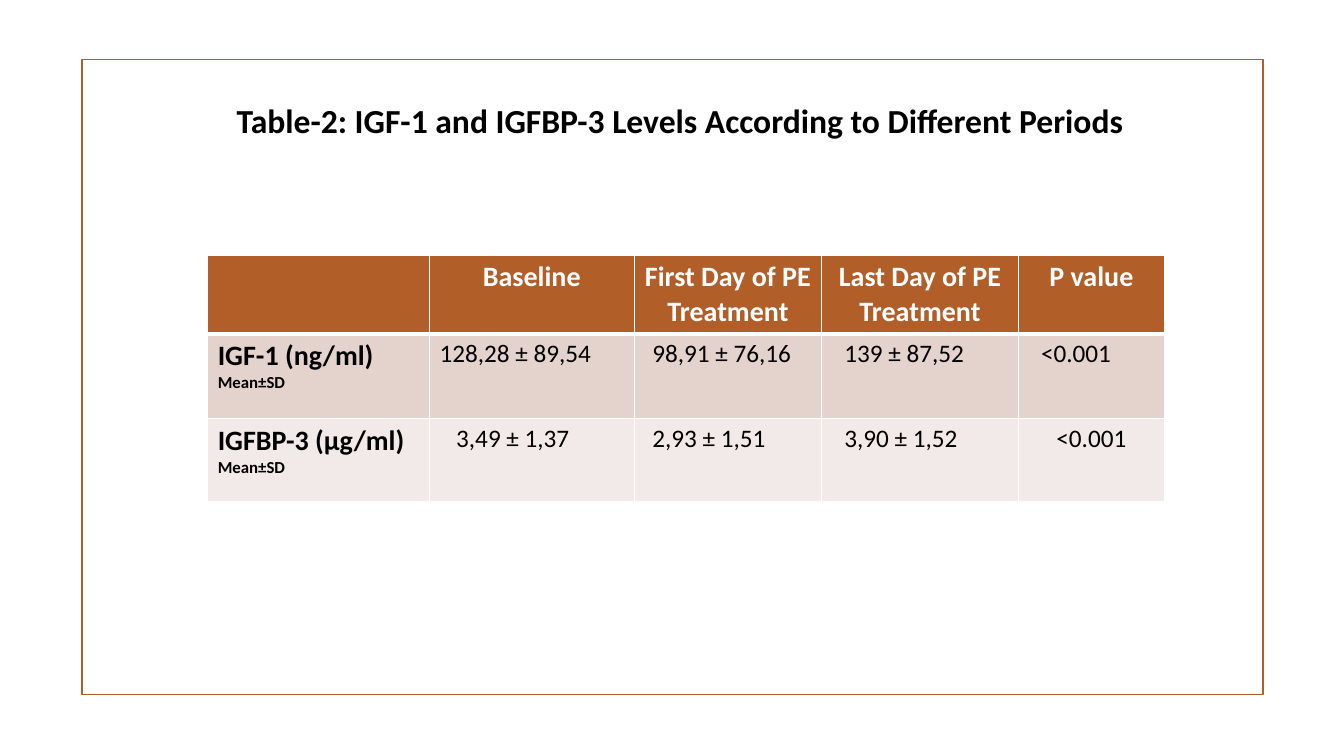
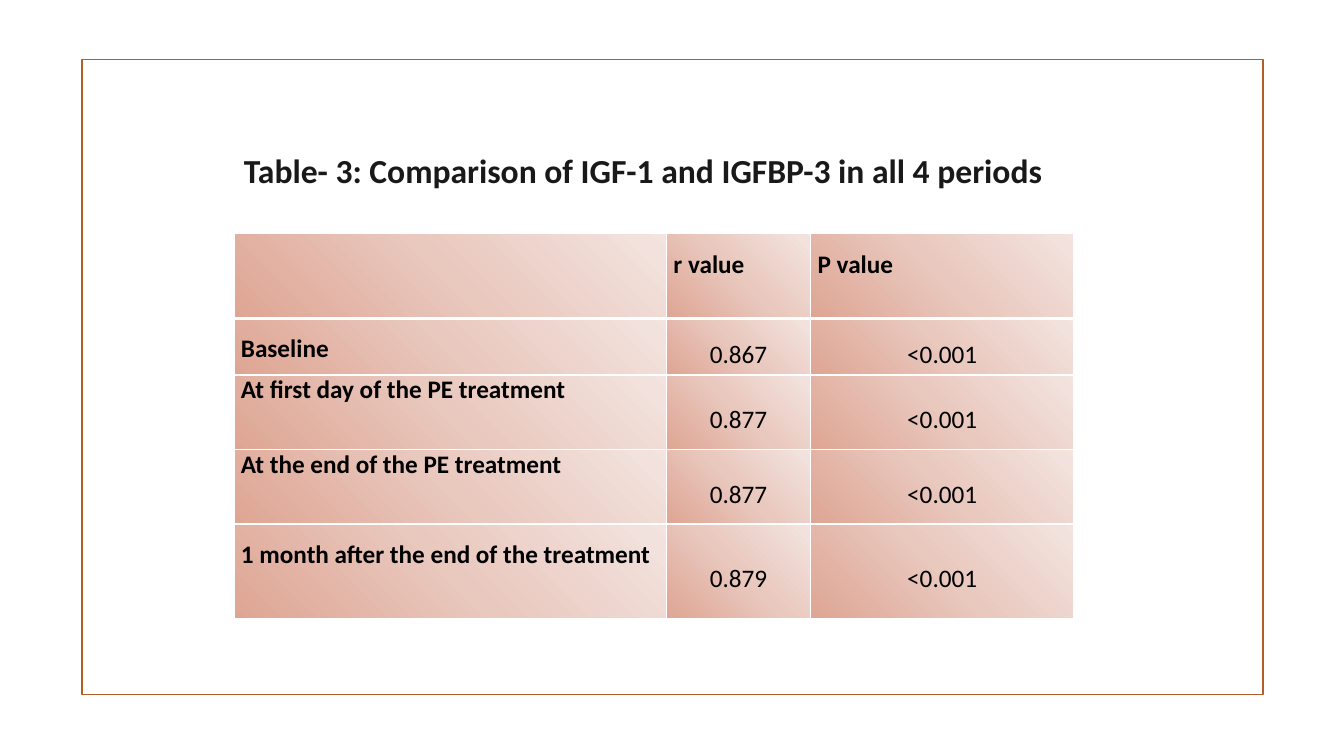
from dataclasses import dataclass

from lxml.etree import SubElement
from pptx import Presentation
from pptx.dml.color import RGBColor
from pptx.enum.shapes import MSO_SHAPE
from pptx.enum.text import MSO_ANCHOR, MSO_AUTO_SIZE, PP_ALIGN
from pptx.oxml import parse_xml
from pptx.oxml.ns import nsdecls, qn
from pptx.util import Pt

EMU_PER_PX = 9144


@dataclass(frozen=True)
class Theme:
    font: str = "Calibri"
    accent: str = "B15E28"
    white: str = "FFFFFF"
    black: str = "000000"
    charcoal: str = "191919"
    bands: tuple = ("E4D2CD", "F2EAE8")
    gradient: tuple = ((0, "DEA593"), (50, "E9C8BE"), (100, "F3E4E0"))
    title_size: int = 24
    label_size: int = 20
    body_size: int = 18
    note_size: int = 12
    frame_line: float = 1.25
    cell_line: int = 1
    header_line: int = 3


THEME = Theme()


def px(length):
    return length * EMU_PER_PX


def style_para(para, size, color, bold=False, align=PP_ALIGN.LEFT):
    para.alignment = align
    font = para.font
    font.name = THEME.font
    font.size = Pt(size)
    font.bold = bold
    font.color.rgb = RGBColor.from_string(color)


def add_page(deck):
    page = deck.slides.add_slide(deck.slide_layouts[6])
    frame = page.shapes.add_shape(MSO_SHAPE.RECTANGLE, px(81), px(59), px(1172), px(630))
    frame.shadow.inherit = False
    frame.fill.background()
    frame.line.color.rgb = RGBColor.from_string(THEME.accent)
    frame.line.width = Pt(THEME.frame_line)
    return page


def add_title(page, text, bounds, color, wrap=True, line_spacing=None):
    box = page.shapes.add_textbox(*map(px, bounds))
    box.text_frame.word_wrap = wrap
    box.text_frame.auto_size = MSO_AUTO_SIZE.SHAPE_TO_FIT_TEXT
    para = box.text_frame.paragraphs[0]
    para.text = text
    para.line_spacing = line_spacing
    style_para(para, THEME.title_size, color, bold=True)


def add_grid(page, left, top, widths, heights):
    grid = page.shapes.add_table(
        len(heights), len(widths), px(left), px(top), px(sum(widths)), px(sum(heights))
    ).table
    grid.horz_banding = False
    for column, width in zip(grid.columns, widths):
        column.width = px(width)
    for row, height in zip(grid.rows, heights):
        row.height = px(height)
    return grid


def set_borders(cell, row):
    header_line, cell_line = THEME.header_line, THEME.cell_line
    weights = {
        "lnL": cell_line,
        "lnR": cell_line,
        "lnT": header_line if row == 1 else cell_line,
        "lnB": header_line if row == 0 else cell_line,
    }
    properties = cell._tc.get_or_add_tcPr()
    for index, (side, weight) in enumerate(weights.items()):
        border = parse_xml(
            f'<a:{side} {nsdecls("a")} w="{Pt(weight)}"><a:solidFill>'
            f'<a:srgbClr val="{THEME.white}"/></a:solidFill></a:{side}>'
        )
        properties.insert(index, border)


def fill_solid(cell, color):
    cell.fill.solid()
    cell.fill.fore_color.rgb = RGBColor.from_string(color)


def fill_gradient(cell):
    gradient = SubElement(cell._tc.get_or_add_tcPr(), qn("a:gradFill"))
    stops = SubElement(gradient, qn("a:gsLst"))
    for position, color in THEME.gradient:
        stop = SubElement(stops, qn("a:gs"), pos=str(position * 1000))
        SubElement(stop, qn("a:srgbClr"), val=color)
    radial = SubElement(gradient, qn("a:path"), path="circle")
    SubElement(radial, qn("a:fillToRect"), t="100000", r="100000")


def add_levels_table(page):
    rows = [
        ("", "Baseline", "First Day of PE Treatment", "Last Day of PE Treatment", "P value"),
        ("IGF-1 (ng/ml)\nMean±SD", "128,28 ± 89,54 \t", "98,91 ± 76,16 \t",
         "139 ± 87,52 \t", "<0.001\t"),
        ("IGFBP-3 (µg/ml)\nMean±SD", "3,49 ± 1,37 \t", "2,93 ± 1,51 \t",
         "3,90 ± 1,52 \t", "<0.001"),
    ]
    grid = add_grid(page, 206, 253, (220, 203, 186, 195, 145), (77, 84, 83))
    for row, texts in enumerate(rows):
        for column, text in enumerate(texts):
            cell = grid.cell(row, column)
            cell.text = text
            fill_solid(cell, THEME.bands[row - 1] if row else THEME.accent)
            set_borders(cell, row)
            paras = cell.text_frame.paragraphs
            if row == 0:
                style_para(paras[0], THEME.label_size, THEME.white, True, PP_ALIGN.CENTER)
            elif column == 0:
                for para, size in zip(paras, (THEME.label_size, THEME.note_size)):
                    style_para(para, size, THEME.black, True)
            else:
                style_para(paras[0], THEME.body_size, THEME.black, align=PP_ALIGN.CENTER)


def add_comparison_table(page):
    rows = [
        ("", "r value", "P value"),
        ("Baseline", "0.867", "<0.001"),
        ("At first day of the PE treatment", "0.877", "<0.001"),
        ("At the end of the PE treatment", "0.877", "<0.001"),
        ("1 month after the end of the treatment", "0.879", "<0.001"),
    ]
    single_spaced_rows = (2, 3)
    grid = add_grid(page, 232, 232, (429, 143, 261), (84, 56, 74, 74, 94))
    for row, texts in enumerate(rows):
        for column, text in enumerate(texts):
            cell = grid.cell(row, column)
            cell.text = text
            cell.margin_left = cell.margin_right = px(7)
            cell.margin_top = cell.margin_bottom = 0
            fill_gradient(cell)
            set_borders(cell, row)
            is_label = row == 0 or column == 0
            para = cell.text_frame.paragraphs[0]
            if not (column == 0 and row in single_spaced_rows):
                para.line_spacing = 1.5
            if not is_label:
                cell.vertical_anchor = MSO_ANCHOR.MIDDLE
            align = PP_ALIGN.LEFT if is_label else PP_ALIGN.CENTER
            style_para(para, THEME.body_size, THEME.black, is_label, align)


def main():
    deck = Presentation()
    deck.slide_width = px(1333)
    deck.slide_height = px(750)

    levels_page = add_page(deck)
    add_levels_table(levels_page)
    add_title(
        levels_page,
        "Table-2: IGF-1 and IGFBP-3 Levels According to Different Periods",
        (225, 94, 917, 50),
        THEME.black,
        wrap=False,
    )

    comparison_page = add_page(deck)
    add_title(
        comparison_page,
        "Table- 3: Comparison of IGF-1 and IGFBP-3 in all 4 periods",
        (232, 84, 855, 111),
        THEME.charcoal,
        line_spacing=2.5,
    )
    add_comparison_table(comparison_page)

    deck.save("out.pptx")


if __name__ == "__main__":
    main()
